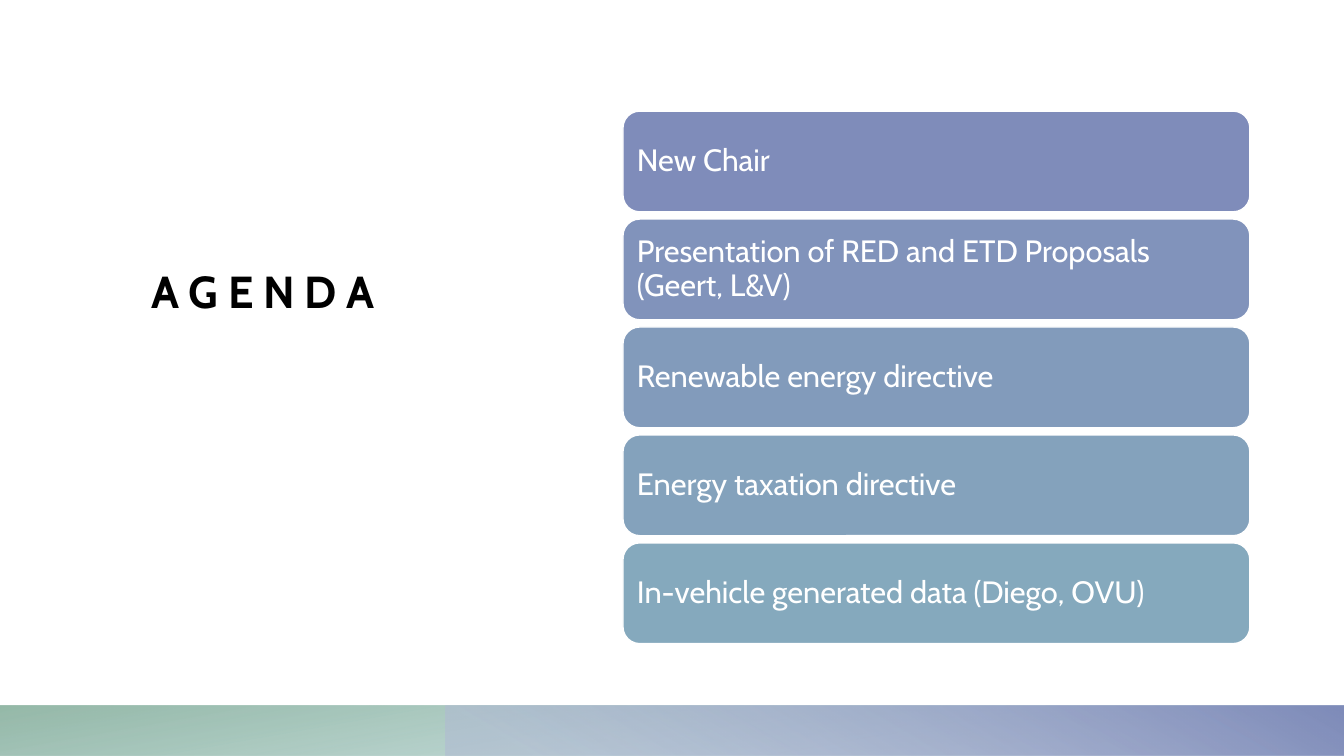
from lxml import etree
from pptx import Presentation
from pptx import util as u
from pptx.dml.color import RGBColor
from pptx.enum import shapes, text
from pptx.oxml.ns import qn

COLOURS = {
    "title": "000000", "white": "FFFFFF",
    "teal": "77AFAC", "green": "83AD99", "mist": "B2BAD6", "violet": "7F8CBA",
    "card1": "7F8CBA", "card2": "8193BB", "card3": "829BBB",
    "card4": "84A2BC", "card5": "85A9BD",
}
TOPICS = [
    "New Chair",
    "Presentation of RED and ETD Proposals (Geert, L&V)",
    "Renewable energy directive",
    "Energy taxation directive",
    "In-vehicle generated data (Diego, OVU)",
]


def colour(name):
    return RGBColor.from_string(COLOURS[name])


def write(shape, words, *, size, ink, bold=False, tracking=0, inset=0.0,
          spacing=1.0, anchor=text.MSO_ANCHOR.MIDDLE):
    frame = shape.text_frame
    frame.word_wrap = True
    frame.auto_size = text.MSO_AUTO_SIZE.NONE
    frame.vertical_anchor = anchor
    frame.margin_left = frame.margin_right = u.Cm(inset)
    frame.margin_top = frame.margin_bottom = u.Cm(inset)
    para = frame.paragraphs[0]
    para.alignment = text.PP_ALIGN.LEFT
    para.line_spacing = spacing
    span = para.add_run()
    span.text = words
    span.font.name = "Cabin"
    span.font.size = u.Pt(size)
    span.font.bold = bold
    span.font.color.rgb = colour(ink)
    if tracking:
        span.font._element.set("spc", str(tracking * 100))


class AgendaSlide:
    font_size = 22

    def __init__(self, deck):
        self.page = deck.slides.add_slide(deck.slide_layouts[5])

    def shape(self, kind, left, top, width, height):
        box = self.page.shapes.add_shape(
            kind, u.Cm(left), u.Cm(top), u.Cm(width), u.Cm(height))
        box.shadow.inherit = False
        return box

    def band(self, left, width, angle, stops, rotation=0):
        """Mirrored gradient strip; stops are (position, colour, opacity %)."""
        box = self.shape(shapes.MSO_SHAPE.RECTANGLE, left, 17.78, width, 1.27)
        box.rotation = rotation
        box._element.spPr.find(qn("a:xfrm")).set("flipH", "1")
        box.line.fill.background()
        box.fill.gradient()
        box.fill.gradient_angle = 360 - angle
        for stop, (position, name, opacity) in zip(box.fill.gradient_stops, stops):
            stop.position = position
            stop.color.rgb = colour(name)
            tint = stop._gs.find(qn("a:srgbClr"))
            etree.SubElement(tint, qn("a:alpha")).set("val", str(opacity * 1000))

    def title(self, words):
        box = self.page.shapes.title
        box.left, box.top, box.width, box.height = map(u.Cm, (3.81, 2.74, 10.92, 5.26))
        write(box, words, size=32, ink="title", bold=True, tracking=7,
              anchor=text.MSO_ANCHOR.BOTTOM)
        self.page.shapes._spTree.append(box._element)  # in front of the bands

    def card(self, words, top, fill):
        box = self.shape(shapes.MSO_SHAPE.ROUNDED_RECTANGLE, 15.7, top, 15.8, 2.54)
        box.fill.solid()
        box.fill.fore_color.rgb = colour(fill)
        box.line.color.rgb = colour("white")
        box.line.width = u.Pt(1)
        write(box, words, size=self.font_size, ink="white", inset=0.23, spacing=0.9)


def main():
    deck = Presentation()
    deck.slide_width, deck.slide_height = u.Cm(33.87), u.Cm(19.05)
    slide = AgendaSlide(deck)

    # Footer bands
    slide.band(0, 33.87, 100, [(0.14, "teal", 28), (1, "green", 85)], rotation=180)
    slide.band(11.22, 22.65, 240, [(0.09, "mist", 55), (0.99, "violet", 100)])

    # Heading
    slide.title("AGENDA")

    # Topic cards at an even pitch
    for index, topic in enumerate(TOPICS):
        slide.card(topic, 2.8 + 2.72 * index, f"card{index + 1}")

    deck.save("out.pptx")


if __name__ == "__main__":
    main()
